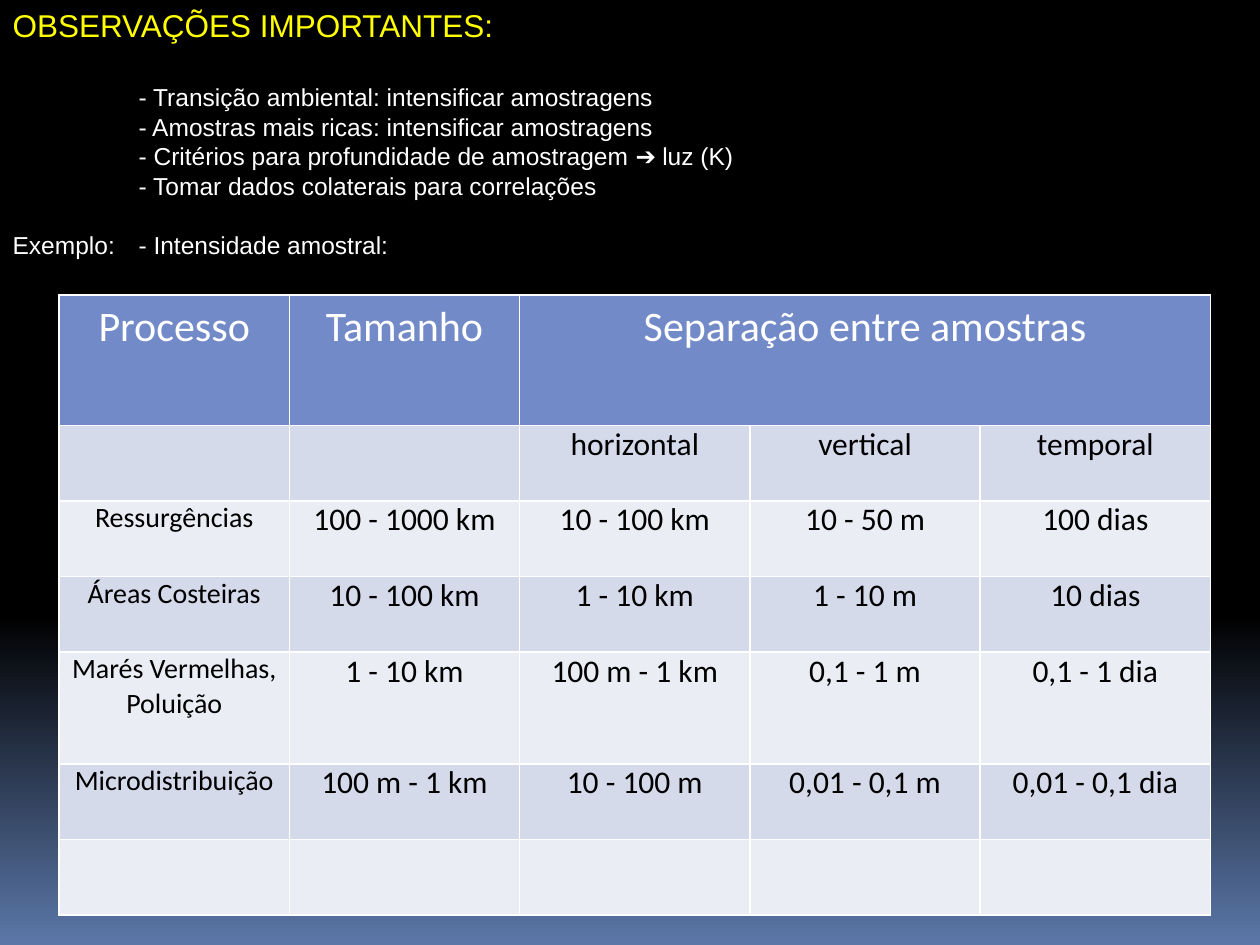
from lxml import etree
from pptx import Presentation
from pptx.dml.color import RGBColor
from pptx.enum.text import MSO_ANCHOR, MSO_AUTO_SIZE, PP_ALIGN
from pptx.oxml.ns import qn
from pptx.util import Pt

TOP = MSO_ANCHOR.TOP
NO_AUTOFIT = MSO_AUTO_SIZE.NONE
LEFT, CENTER = PP_ALIGN.LEFT, PP_ALIGN.CENTER

BLACK, WHITE, YELLOW, NIGHT_BLUE = "000000", "FFFFFF", "FFFF00", "5B77A8"
HEADER_FILL, BANDS = "738AC8", ("EBEDF5", "D5DAEB")
TAB = 72
LINE_HEIGHT = 16.8

NOTES = [
    "- Transição ambiental: intensificar amostragens",
    "- Amostras mais ricas: intensificar amostragens",
    "- Critérios para profundidade de amostragem ➔ luz (K)",
    "- Tomar dados colaterais para correlações",
]
EXAMPLE = "Exemplo:\t- Intensidade amostral:"
ROWS = [
    ["Processo", "Tamanho", "Separação entre amostras", "", ""],
    ["", "", "horizontal", "vertical", "temporal"],
    ["Ressurgências", "100 - 1000 km", "10 - 100 km", "10 - 50 m", "100 dias"],
    ["Áreas Costeiras", "10 - 100 km", "1 - 10 km", "1 - 10 m", "10 dias"],
    ["Marés Vermelhas, Poluição", "1 - 10 km", "100 m - 1 km", "0,1 - 1 m", "0,1 - 1 dia"],
    ["Microdistribuição", "100 m - 1 km", "10 - 100 m", "0,01 - 0,1 m", "0,01 - 0,1 dia"],
    ["", "", "", "", ""],
]
ROW_HEIGHTS = [74.6, 43.2, 43.2, 43.2, 63.8, 43.2, 43.2]
COLUMN_WIDTH = 131.6


def color(value):
    return RGBColor.from_string(value)


class SlideBuilder:
    """Holds the style and the current slide, with a method for each kind of element."""

    text_font = "Arial"
    table_font = "Calibri"

    def __init__(self, slide):
        self.slide = slide

    def background(self, start, end, position):
        fill = self.slide.background.fill
        fill.gradient()
        fill.gradient_angle = 270
        for stop, value, place in zip(fill.gradient_stops, (start, end), (position, 1)):
            stop.color.rgb = color(value)
            stop.position = place

    def style(self, paragraph, font, size, value, alignment):
        paragraph.alignment = alignment
        for run in paragraph.runs:
            run.font.name = font
            run.font.size = Pt(size)
            run.font.color.rgb = color(value)

    def place(self, shape, left, top, width, height):
        shape.left, shape.top = Pt(left), Pt(top)
        shape.width, shape.height = Pt(width), Pt(height)
        text_frame = shape.text_frame
        text_frame.word_wrap = True
        text_frame.auto_size = NO_AUTOFIT
        text_frame.vertical_anchor = TOP
        return text_frame

    def title(self, text, *box):
        text_frame = self.place(self.slide.shapes.title, *box)
        text_frame.text = text
        self.style(text_frame.paragraphs[0], self.text_font, 18, YELLOW, LEFT)

    def body(self, lines, example, *box):
        text_frame = self.place(self.slide.placeholders[1], *box)
        text_frame.text = "\n".join(lines + [example])
        for paragraph in text_frame.paragraphs:
            hanging = paragraph.text == example
            properties = paragraph._p.get_or_add_pPr()
            properties.set("marL", str(Pt(TAB)))
            properties.set("indent", str(Pt(-TAB if hanging else 0)))
            etree.SubElement(properties, qn("a:buNone"))
            paragraph.line_spacing = Pt(LINE_HEIGHT)
            paragraph.space_before = Pt(LINE_HEIGHT if hanging else 0)
            self.style(paragraph, self.text_font, 14, WHITE, LEFT)

    def borders(self, cell, value, width):
        properties = cell._tc.get_or_add_tcPr()
        for side in ("lnL", "lnR", "lnT", "lnB"):
            line = etree.SubElement(properties, qn(f"a:{side}"), w=str(Pt(width)))
            fill = etree.SubElement(line, qn("a:solidFill"))
            etree.SubElement(fill, qn("a:srgbClr"), val=value)

    def cell(self, cell, text, fill, size, value):
        self.borders(cell, WHITE, 1)
        cell.fill.solid()
        cell.fill.fore_color.rgb = color(fill)
        cell.text = text
        self.style(cell.text_frame.paragraphs[0], self.table_font, size, value, CENTER)

    def table(self, rows, heights, column_width, left, top):
        columns = len(rows[0])
        frame = self.slide.shapes.add_table(
            len(rows), columns, Pt(left), Pt(top),
            Pt(columns * column_width), Pt(sum(heights)))
        table = frame.table
        for column in table.columns:
            column.width = Pt(column_width)
        for row_index, (texts, height) in enumerate(zip(rows, heights)):
            table.rows[row_index].height = Pt(height)
            for column_index, text in enumerate(texts):
                cell = table.cell(row_index, column_index)
                if row_index == 0:
                    self.cell(cell, text, HEADER_FILL, 24, WHITE)
                    continue
                size = 16 if column_index == 0 else 18
                self.cell(cell, text, BANDS[row_index % 2], size, BLACK)
                cell.margin_left = cell.margin_right = Pt(3.6)
                cell.margin_top = cell.margin_bottom = Pt(0)
        table.cell(0, 2).merge(table.cell(0, 4))


def main():
    presentation = Presentation()
    presentation.slide_width, presentation.slide_height = Pt(720), Pt(540)
    builder = SlideBuilder(presentation.slides.add_slide(presentation.slide_layouts[1]))
    builder.background(BLACK, NIGHT_BLUE, 0.65)
    builder.title("OBSERVAÇÕES IMPORTANTES:", 0, 0, 703.4, 30)
    builder.body(NOTES, EXAMPLE, 0, 43.5, 703.4, 112)
    builder.table(ROWS, ROW_HEIGHTS, COLUMN_WIDTH, 33.8, 168.5)
    presentation.save("out.pptx")


if __name__ == "__main__":
    main()
